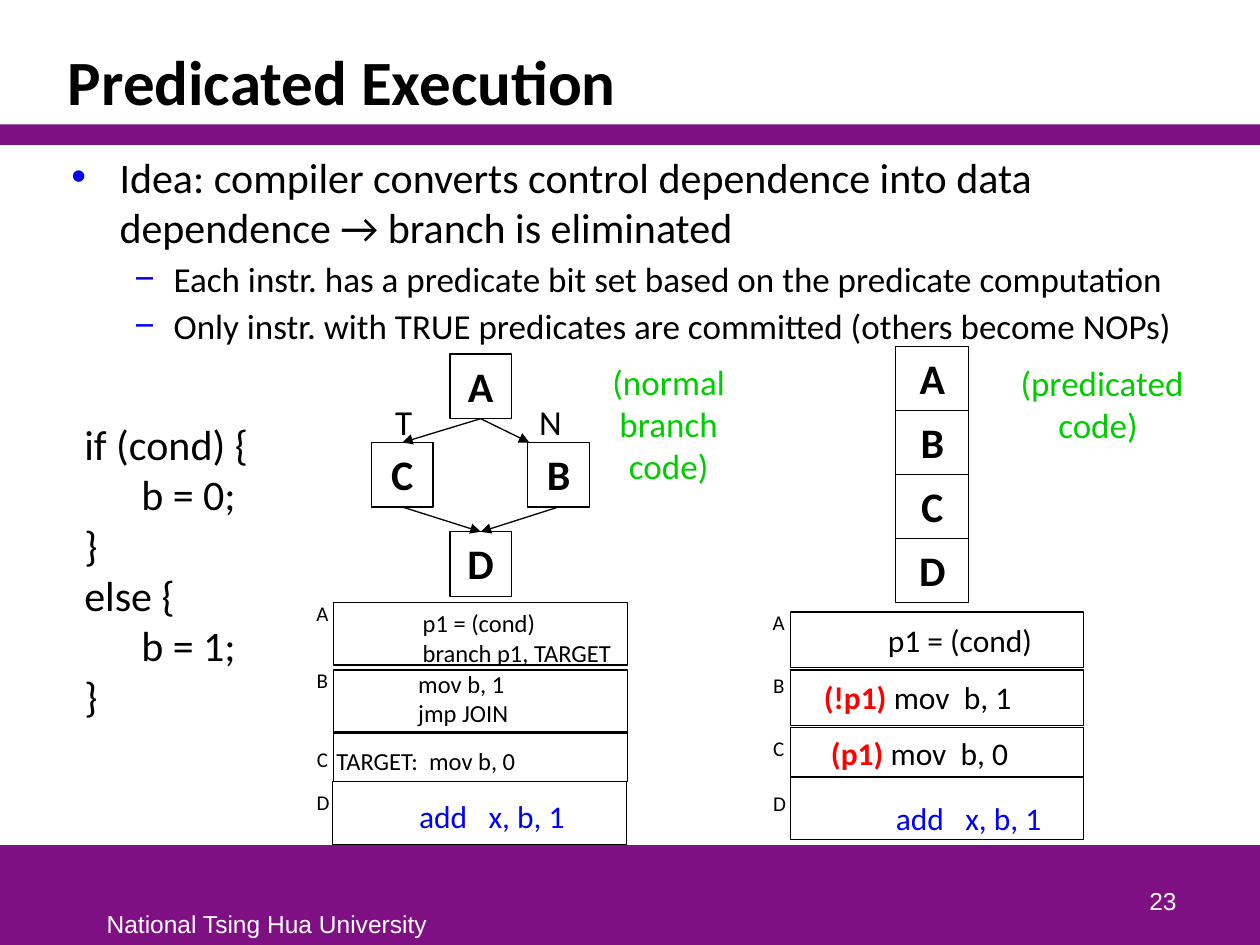
import pptx
import pptx.util
import pptx.dml.color
import pptx.enum.shapes
import pptx.enum.text
import pptx.oxml.ns
from lxml import etree

Cm = pptx.util.Cm
ALIGN = pptx.enum.text.PP_ALIGN
ANCHOR = pptx.enum.text.MSO_ANCHOR
TOP, BOTTOM = 0, 2

COLORS = {
    "purple": "7F1084",
    "white": "FFFFFF",
    "black": "000000",
    "blue": "0000FF",
    "green": "00CC00",
    "red": "FF0000",
}


def color(name):
    return pptx.dml.color.RGBColor.from_string(COLORS[name])


def add_child(parent, tag, **attributes):
    return etree.SubElement(parent, pptx.oxml.ns.qn(tag), attributes)


def style(font, size, ink="black", bold=False, face="Calibri"):
    font.name = face
    font.size = pptx.util.Pt(size)
    font.bold = bold
    font.color.rgb = color(ink)


def write(shape, lines, size, ink="black", bold=False, face="Calibri",
          align=ALIGN.LEFT, spacing=None, anchor=ANCHOR.TOP, wrap=False):
    frame = shape.text_frame
    frame.word_wrap = wrap
    frame.vertical_anchor = anchor
    for number, line in enumerate(lines):
        paragraph = frame.add_paragraph() if number else frame.paragraphs[0]
        paragraph.text = line
        paragraph.alignment = align
        paragraph.line_spacing = spacing
        style(paragraph.font, size, ink, bold, face)


def add_text(slide, area, lines, size, **options):
    text = slide.shapes.add_textbox(*map(Cm, area))
    write(text, lines, size, **options)
    return text


def add_box(slide, area, fill=None, line="black"):
    box = slide.shapes.add_shape(
        pptx.enum.shapes.MSO_SHAPE.RECTANGLE, *map(Cm, area))
    box.shadow.inherit = False
    if fill:
        box.fill.solid()
        box.fill.fore_color.rgb = color(fill)
    else:
        box.fill.background()
    if line:
        box.line.color.rgb = color(line)
        box.line.width = pptx.util.Pt(0.75)
    else:
        box.line.fill.background()
    return box


def add_node(slide, name, area):
    node = add_box(slide, area, fill="white")
    write(node, [name], 24, bold=True, align=ALIGN.CENTER)
    return node


def add_arrow(slide, source, target=None, end=(0, 0)):
    arrow = slide.shapes.add_connector(
        pptx.enum.shapes.MSO_CONNECTOR.STRAIGHT, 0, 0, *map(Cm, end))
    arrow.begin_connect(source, BOTTOM)
    if target is not None:
        arrow.end_connect(target, TOP)
    arrow.line.color.rgb = color("black")
    arrow.line.width = pptx.util.Pt(0.75)
    add_child(arrow.line._get_or_add_ln(), "a:tailEnd", type="triangle")
    add_child(arrow._element.spPr, "a:effectLst")


def add_bullets(slide, area, items):
    body = slide.shapes.add_textbox(*map(Cm, area))
    frame = body.text_frame
    frame.word_wrap = True
    for number, (level, text) in enumerate(items):
        paragraph = frame.add_paragraph() if number else frame.paragraphs[0]
        paragraph.text = text
        paragraph.level = level
        if number:
            paragraph.space_before = pptx.util.Pt(3)
        margin, hang, mark, size = [(0.97, 0.97, "•", 24),
                                    (2.06, 0.79, "−", 20)][level]
        properties = paragraph._p.get_or_add_pPr()
        properties.set("marL", str(Cm(margin)))
        properties.set("indent", str(-Cm(hang)))
        bullet_color = add_child(properties, "a:buClr")
        add_child(bullet_color, "a:srgbClr", val=COLORS["blue"])
        add_child(properties, "a:buFont", typeface="Arial")
        add_child(properties, "a:buChar", char=mark)
        style(paragraph.font, size)


def add_listing_frame(slide, label_left, labels, rows):
    for name, top in zip("ABC", labels):
        add_text(slide, (label_left, top, 0.76, 1.02), [name], 12,
                 align=ALIGN.CENTER, spacing=1.5)
    add_text(slide, (label_left, labels[3], 0.79, 0.76), ["D"], 12,
             align=ALIGN.CENTER)
    for left, top, height in rows:
        add_box(slide, (left, top, 5.92, height))


def add_join(slide, left, top):
    add_text(slide, (left, top, 3.48, 1.02), ["add   x, b, 1"], 18, ink="blue")


def add_branch_version(slide):
    places = {"A": (9.07, 7.14), "B": (10.64, 8.92),
              "C": (7.49, 8.92), "D": (9.07, 10.72)}
    nodes = {name: add_node(slide, name, (*place, 1.24, 1.3))
             for name, place in places.items()}
    add_arrow(slide, nodes["A"], nodes["C"])
    add_arrow(slide, nodes["A"], end=(10.67, 8.92))
    add_arrow(slide, nodes["C"], nodes["D"])
    add_arrow(slide, nodes["B"], nodes["D"])
    for name, left in (("T", 7.7), ("N", 10.62)):
        add_text(slide, (left, 7.52, 0.88, 1.53), [name], 20,
                 align=ALIGN.CENTER, spacing=1.5)
    add_text(slide, (11.46, 7.14, 4.04, 1.96), ["(normal branch code)"], 20,
             ink="green", align=ALIGN.CENTER, wrap=True)
    add_listing_frame(slide, 6.12, (11.73, 13.08, 14.68, 15.8),
                      [(6.73, 12.14, 1.27), (6.73, 13.51, 1.27),
                       (6.73, 14.76, 0.99), (6.71, 15.75, 1.27)])
    add_text(slide, (6.71, 12.14, 6.55, 1.45),
             ["              p1 = (cond)", "              branch p1, TARGET"],
             14, wrap=True)
    add_text(slide, (6.73, 13.36, 3.81, 1.45),
             ["             mov b, 1", "             jmp JOIN"], 14)
    add_text(slide, (6.53, 14.91, 4.17, 0.86), ["TARGET:  mov b, 0"], 14)
    add_join(slide, 8.2, 15.95)


def add_predicated_version(slide):
    for number, name in enumerate("ABCD"):
        add_node(slide, name, (18.06, 6.98 + 1.29 * number, 1.47, 1.3))
    add_text(slide, (19.66, 7.16, 5.11, 1.96), ["(predicated code) "], 20,
             ink="green", align=ALIGN.CENTER, wrap=True)
    add_listing_frame(slide, 15.32, (11.91, 13.18, 14.45, 15.82),
                      [(15.93, 12.34, 1.12), (15.93, 13.51, 1.12),
                       (15.93, 14.66, 1.02), (15.93, 15.65, 1.27)])
    listing = add_text(slide, (16.36, 12.01, 4.78, 3.71),
                       ["         p1 = (cond)", "", ""], 18, spacing=1.5)
    guarded = [("(!p1) ", "mov  b, 1"), (" (p1) ", "mov  b, 0")]
    for paragraph, parts in zip(listing.text_frame.paragraphs[1:], guarded):
        for text, ink in zip(parts, ("red", "black")):
            run = paragraph.add_run()
            run.text = text
            style(run.font, 18, ink, bold=ink == "red")
    add_join(slide, 17.81, 15.98)


def main():
    deck = pptx.Presentation()
    deck.slide_width, deck.slide_height = Cm(25.4), Cm(19.05)
    slide = deck.slides.add_slide(deck.slide_layouts[6])
    for top, height in ((17.04, 2.01), (2.51, 0.41)):
        add_box(slide, (0, top, 25.4, height), fill="purple", line=None)
    add_text(slide, (1.9, 18.21, 7.01, 0.84), ["National Tsing Hua University"],
             14, ink="white", face="Arial")
    add_text(slide, (18.69, 17.3, 5.28, 1.27), ["23"], 14, ink="white",
             face="Arial", align=ALIGN.RIGHT, anchor=ANCHOR.BOTTOM, wrap=True)
    add_text(slide, (1.12, 0.64, 22.78, 1.88), ["Predicated Execution"], 36,
             bold=True, spacing=0.85, anchor=ANCHOR.BOTTOM, wrap=True)
    add_bullets(slide, (1.19, 2.92, 22.71, 13.79), [
        (0, "Idea: compiler converts control dependence into data "
            "dependence → branch is eliminated"),
        (1, "Each instr. has a predicate bit set based on the predicate "
            "computation"),
        (1, "Only instr. with TRUE predicates are committed (others become "
            "NOPs)"),
    ])
    add_text(slide, (1.45, 8.31, 3.84, 6.4),
             ["if (cond) {", "      b = 0;", "}",
              "else {", "      b = 1;", "}"], 24)
    add_predicated_version(slide)
    add_branch_version(slide)
    deck.save("out.pptx")


if __name__ == "__main__":
    main()
